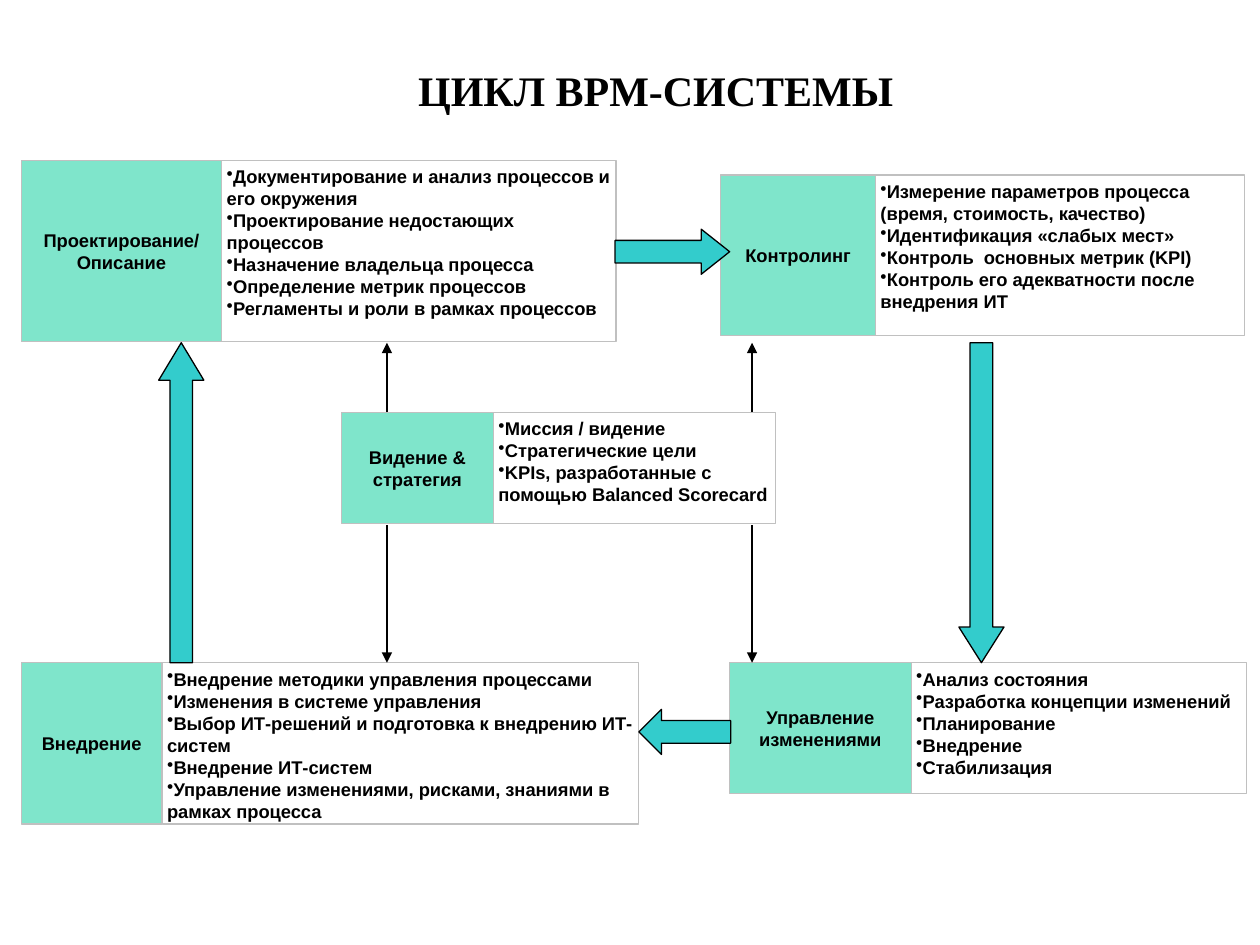
import pptx
import pptx.dml.color
import pptx.enum.shapes
import pptx.enum.text
import pptx.oxml.ns
import pptx.util
from lxml import etree

Cm, Pt = pptx.util.Cm, pptx.util.Pt
SHAPES = pptx.enum.shapes.MSO_SHAPE
ANCHOR = pptx.enum.text.MSO_ANCHOR
ALIGN = pptx.enum.text.PP_ALIGN

# Lengths in cm
TITLE = ("ЦИКЛ BPM-СИСТЕМЫ", 8.18, 1.17, 10.39, 1.27)

# label paragraphs, list items, left, top, label width, list width, height
STAGES = [
    (["Проектирование/", "Описание"],
     ["Документирование и анализ процессов и его окружения",
      "Проектирование недостающих процессов",
      "Назначение владельца процесса",
      "Определение метрик процессов",
      "Регламенты и роли в рамках процессов"],
     0.43, 3.23, 4.04, 7.95, 3.66),
    (["Внедрение"],
     ["Внедрение методики управления процессами",
      "Изменения в системе управления",
      "Выбор ИТ-решений и подготовка к внедрению ИТ-систем",
      "Внедрение ИТ-систем",
      "Управление изменениями, рисками, знаниями в рамках процесса"],
     0.43, 13.36, 2.84, 9.6, 3.25),
    (["Контролинг"],
     ["Измерение параметров процесса (время, стоимость, качество)",
      "Идентификация «слабых мест»",
      "Контроль  основных метрик (KPI)",
      "Контроль его адекватности после внедрения ИТ"],
     14.53, 3.53, 3.12, 7.44, 3.23),
    (["Видение &\nстратегия"],
     ["Миссия / видение",
      "Стратегические цели",
      "KPIs, разработанные с помощью Balanced Scorecard"],
     6.88, 8.31, 3.07, 5.69, 2.24),
    (["Управление изменениями"],
     ["Анализ состояния",
      "Разработка концепции изменений",
      "Планирование",
      "Внедрение",
      "Стабилизация"],
     14.71, 13.36, 3.66, 6.76, 2.64),
]

UPPER, LOWER = 6.91, 13.36      # edges of the gap between the two rows of stages
THIN_COLUMNS = (7.8, 15.16)
THIN_SPANS = ((8.31, UPPER), (10.59, LOWER))
THICKNESS = 0.91
# shape, left, top, width, height, head length
CYCLE_ARROWS = [
    (SHAPES.UP_ARROW, 3.2, UPPER, THICKNESS, LOWER - UPPER, 0.83),
    (SHAPES.RIGHT_ARROW, 12.4, 4.62, 2.31, THICKNESS, 0.63),
    (SHAPES.DOWN_ARROW, 19.33, UPPER, THICKNESS, LOWER - UPPER, 0.79),
    (SHAPES.LEFT_ARROW, 12.88, 14.3, 1.85, THICKNESS, 0.5),
]

LABEL_FRAME = {"word_wrap": True, "vertical_anchor": ANCHOR.MIDDLE,
               "margin_left": Cm(0.18), "margin_right": Cm(0.18),
               "margin_top": Cm(0.1), "margin_bottom": Cm(0.1)}
LIST_FRAME = {"word_wrap": True, "vertical_anchor": ANCHOR.TOP,
              "margin_left": Cm(0.1), "margin_right": Cm(0.1),
              "margin_top": Cm(0.1), "margin_bottom": Cm(0.03)}
BODY_FONT = {"name": "Arial", "size": Pt(10.5), "bold": True}
TITLE_FONT = {"name": "Times New Roman", "size": Pt(24), "bold": True}


def color(hex_string):
    return pptx.dml.color.RGBColor.from_string(hex_string)


def apply(target, values):
    for name, value in values.items():
        setattr(target, name, value)


def add_element(parent, tag, **attributes):
    return etree.SubElement(parent, pptx.oxml.ns.qn(tag), attributes)


def style_font(font, values):
    apply(font, values)
    font.color.rgb = color("000000")


def style_line(shape, line_color):
    shape.line.color.rgb = color(line_color)
    shape.line.width = Pt(0.75)


def add_outlined(slide, kind, bounds, line_color, fill=None):
    shape = slide.shapes.add_shape(kind, *map(Cm, bounds))
    shape.shadow.inherit = False
    style_line(shape, line_color)
    if fill:
        shape.fill.solid()
        shape.fill.fore_color.rgb = color(fill)
    else:
        shape.fill.background()
    return shape


def write(shape, texts, frame_values, alignment, bullet=False):
    frame = shape.text_frame
    apply(frame, frame_values)
    for index, text in enumerate(texts):
        paragraph = frame.add_paragraph() if index else frame.paragraphs[0]
        paragraph.text = text
        paragraph.alignment = alignment
        if bullet:
            add_element(paragraph._p.get_or_add_pPr(), "a:buChar", char="•")
        style_font(paragraph.font, BODY_FONT)
        for run in paragraph.runs:
            style_font(run.font, BODY_FONT)


def add_stage(slide, label, items, left, top, label_width, list_width, height):
    label_box = add_outlined(slide, SHAPES.RECTANGLE,
                             (left, top, label_width, height), "C0C0C0", "00CC99")
    fill_color = label_box._element.spPr.find(".//" + pptx.oxml.ns.qn("a:srgbClr"))
    add_element(fill_color, "a:alpha", val="50000")
    write(label_box, label, LABEL_FRAME, ALIGN.CENTER)
    list_box = add_outlined(slide, SHAPES.RECTANGLE,
                            (left + label_width, top, list_width, height), "C0C0C0")
    write(list_box, items, LIST_FRAME, ALIGN.LEFT, bullet=True)


def add_thin_arrow(slide, x, start, end):
    connector = slide.shapes.add_connector(
        pptx.enum.shapes.MSO_CONNECTOR.STRAIGHT, Cm(x), Cm(start), Cm(x), Cm(end))
    style_line(connector, "000000")
    add_element(connector.line._get_or_add_ln(), "a:tailEnd", type="triangle")
    add_element(connector._element.spPr, "a:effectLst")


def add_title(slide, text, *bounds):
    box = slide.shapes.add_textbox(*map(Cm, bounds))
    box.text_frame.word_wrap = False
    paragraph = box.text_frame.paragraphs[0]
    paragraph.text = text
    style_font(paragraph.runs[0].font, TITLE_FONT)


def main():
    presentation = pptx.Presentation()
    presentation.slide_width, presentation.slide_height = Cm(25.4), Cm(19.05)
    slide = presentation.slides.add_slide(presentation.slide_layouts[6])
    for stage in STAGES:
        add_stage(slide, *stage)
    for x in THIN_COLUMNS:
        for start, end in THIN_SPANS:
            add_thin_arrow(slide, x, start, end)
    for kind, *bounds, head in CYCLE_ARROWS:
        arrow = add_outlined(slide, kind, bounds, "000000", "33CCCC")
        arrow.adjustments[0] = 0.5
        arrow.adjustments[1] = head
    add_title(slide, *TITLE)
    presentation.save("out.pptx")


if __name__ == "__main__":
    main()
